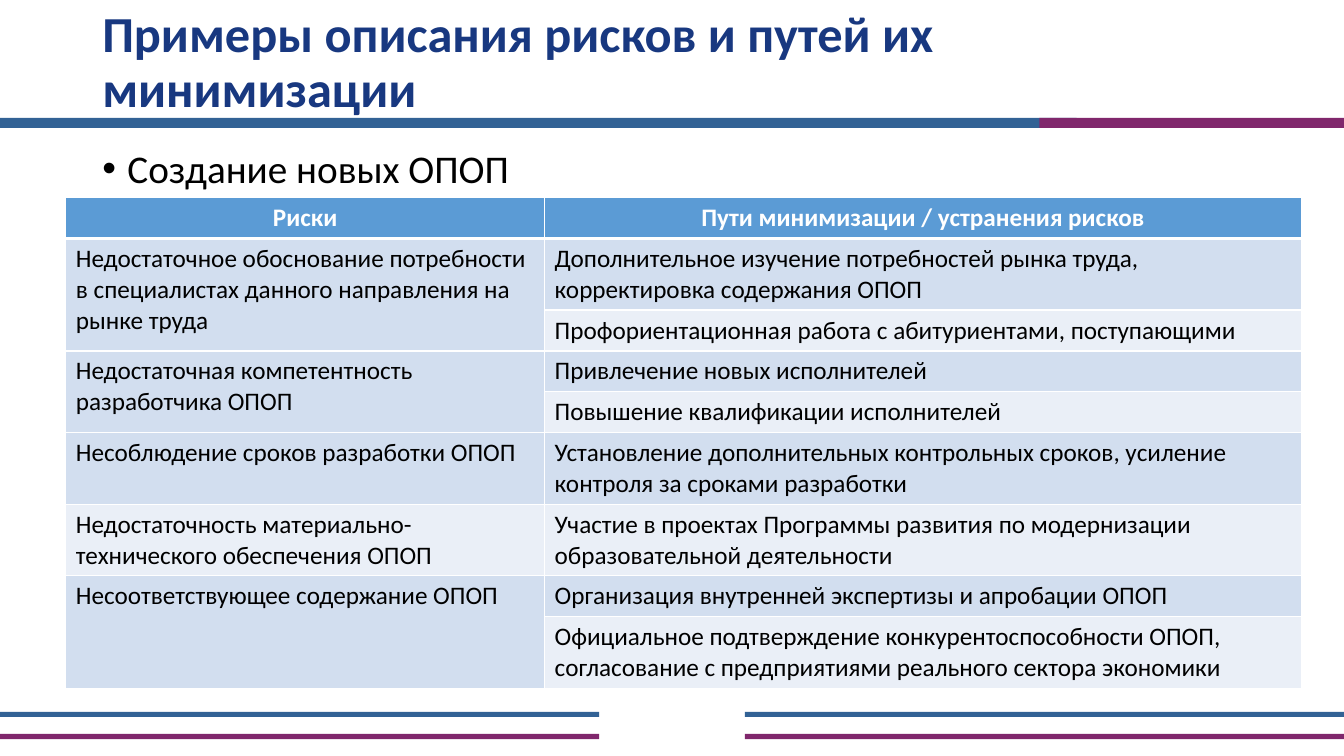
from lxml import etree
from pptx import Presentation
from pptx.dml.color import RGBColor
from pptx.enum.shapes import MSO_SHAPE
from pptx.enum.text import MSO_ANCHOR, PP_ALIGN
from pptx.oxml.ns import qn
from pptx.util import Pt

RECT = MSO_SHAPE.RECTANGLE
TOP, MIDDLE = MSO_ANCHOR.TOP, MSO_ANCHOR.MIDDLE
LEFT, CENTER = PP_ALIGN.LEFT, PP_ALIGN.CENTER

BLUE = RGBColor(0x32, 0x62, 0x95)
PLUM = RGBColor(0x80, 0x27, 0x6C)
NAVY = RGBColor(0x18, 0x38, 0x80)
BLACK = RGBColor(0, 0, 0)
WHITE = RGBColor(0xFF, 0xFF, 0xFF)
HEAD = RGBColor(0x5B, 0x9B, 0xD5)
DARK = RGBColor(0xD2, 0xDE, 0xEF)
PALE = RGBColor(0xEA, 0xEF, 0xF7)

ONE, TWO = 29.2, 51.1  # heights of one-line and two-line rows

TITLES = ("Риски", "Пути минимизации / устранения рисков")
RISKS = [
    ("Недостаточное обоснование потребности в специалистах данного направления на рынке труда",
     [("Дополнительное изучение потребностей рынка труда, корректировка содержания ОПОП", TWO),
      ("Профориентационная работа с абитуриентами, поступающими", ONE)]),
    ("Недостаточная компетентность разработчика ОПОП",
     [("Привлечение новых исполнителей", ONE),
      ("Повышение квалификации исполнителей", ONE)]),
    ("Несоблюдение сроков разработки ОПОП",
     [("Установление дополнительных контрольных сроков, усиление контроля за сроками разработки",
       TWO)]),
    ("Недостаточность материально-технического обеспечения ОПОП",
     [("Участие в проектах Программы развития по модернизации образовательной деятельности",
       TWO)]),
    ("Несоответствующее содержание ОПОП",
     [("Организация внутренней экспертизы и апробации ОПОП", ONE),
      ("Официальное подтверждение конкурентоспособности ОПОП, "
       "согласование с предприятиями реального сектора экономики", TWO)]),
]


class Page:
    face = "Calibri"

    def __init__(self, slide):
        self.slide = slide

    def style(self, para, size, color, bold=False, align=LEFT):
        para.alignment = align
        for run in para.runs:
            font = run.font
            font.name, font.size, font.bold = self.face, Pt(size), bold
            font.color.rgb = color

    def bar(self, x, y, w, h, color):
        shape = self.slide.shapes.add_shape(RECT, Pt(x), Pt(y), Pt(w), Pt(h))
        shape.shadow.inherit = False
        shape.fill.solid()
        shape.fill.fore_color.rgb = color
        shape.line.fill.background()

    def text(self, x, y, w, h, text, size, color, bold=False, anchor=TOP, bullet=False):
        frame = self.slide.shapes.add_textbox(Pt(x), Pt(y), Pt(w), Pt(h)).text_frame
        frame.word_wrap = True
        frame.vertical_anchor = anchor
        frame.text = text
        para = frame.paragraphs[0]
        para.line_spacing = 0.9
        if bullet:
            props = para._p.get_or_add_pPr()
            props.set("marL", str(Pt(18)))
            props.set("indent", str(Pt(-18)))
            etree.SubElement(props, qn("a:buFont"), typeface="Arial")
            etree.SubElement(props, qn("a:buChar"), char="•")
        self.style(para, size, color, bold)

    def border(self, cell, side, width):
        line = etree.SubElement(cell._tc.get_or_add_tcPr(), qn("a:ln" + side), w=str(Pt(width)))
        fill = etree.SubElement(line, qn("a:solidFill"))
        etree.SubElement(fill, qn("a:srgbClr"), val=str(WHITE))

    def cell(self, cell, row):
        top = row == 0
        for side in "LRTB":
            thick = (top and side == "B") or (row == 1 and side == "T")
            self.border(cell, side, 3 if thick else 1)
        cell.fill.solid()
        cell.fill.fore_color.rgb = HEAD if top else DARK if row % 2 else PALE
        self.style(cell.text_frame.paragraphs[0], 18, WHITE if top else BLACK,
                   top, CENTER if top else LEFT)

    def table(self, x, y, widths, titles, groups):
        highs = [ONE] + [high for _, ways in groups for _, high in ways]
        table = self.slide.shapes.add_table(
            len(highs), len(widths), Pt(x), Pt(y), Pt(sum(widths)), Pt(sum(highs))).table
        for col, width in zip(table.columns, widths):
            col.width = Pt(width)
        for line, high in zip(table.rows, highs):
            line.height = Pt(high)
        for col, title in enumerate(titles):
            table.cell(0, col).text_frame.text = title
        row = 1
        for risk, ways in groups:
            first = table.cell(row, 0)
            first.text_frame.text = risk
            if len(ways) > 1:
                first.merge(table.cell(row + len(ways) - 1, 0))
            for way, _ in ways:
                table.cell(row, 1).text_frame.text = way
                row += 1
        for row in range(len(highs)):
            for col in range(len(widths)):
                self.cell(table.cell(row, col), row)


def main():
    deck = Presentation()
    deck.slide_width, deck.slide_height = Pt(960), Pt(540)
    page = Page(deck.slides.add_slide(deck.slide_layouts[6]))

    # Line under the title
    page.bar(0, 84.2, 769, 7.2, BLUE)
    page.bar(742.4, 84.2, 217.6, 7.2, PLUM)

    # Footer lines
    for x in (0, 532):
        for y, color in ((508.4, BLUE), (524.2, PLUM)):
            page.bar(x, y, 428, 3.7, color)

    # Title and topic
    page.text(66, 16.7, 828, 57.6, "Примеры описания рисков и путей их минимизации",
              36, NAVY, True, MIDDLE)
    page.text(66, 103, 557, 37.4, "Создание новых ОПОП", 28, BLACK, bullet=True)

    # Risks and ways to reduce them
    page.table(47, 141.2, (342, 540.7), TITLES, RISKS)

    deck.save("out.pptx")


if __name__ == "__main__":
    main()
